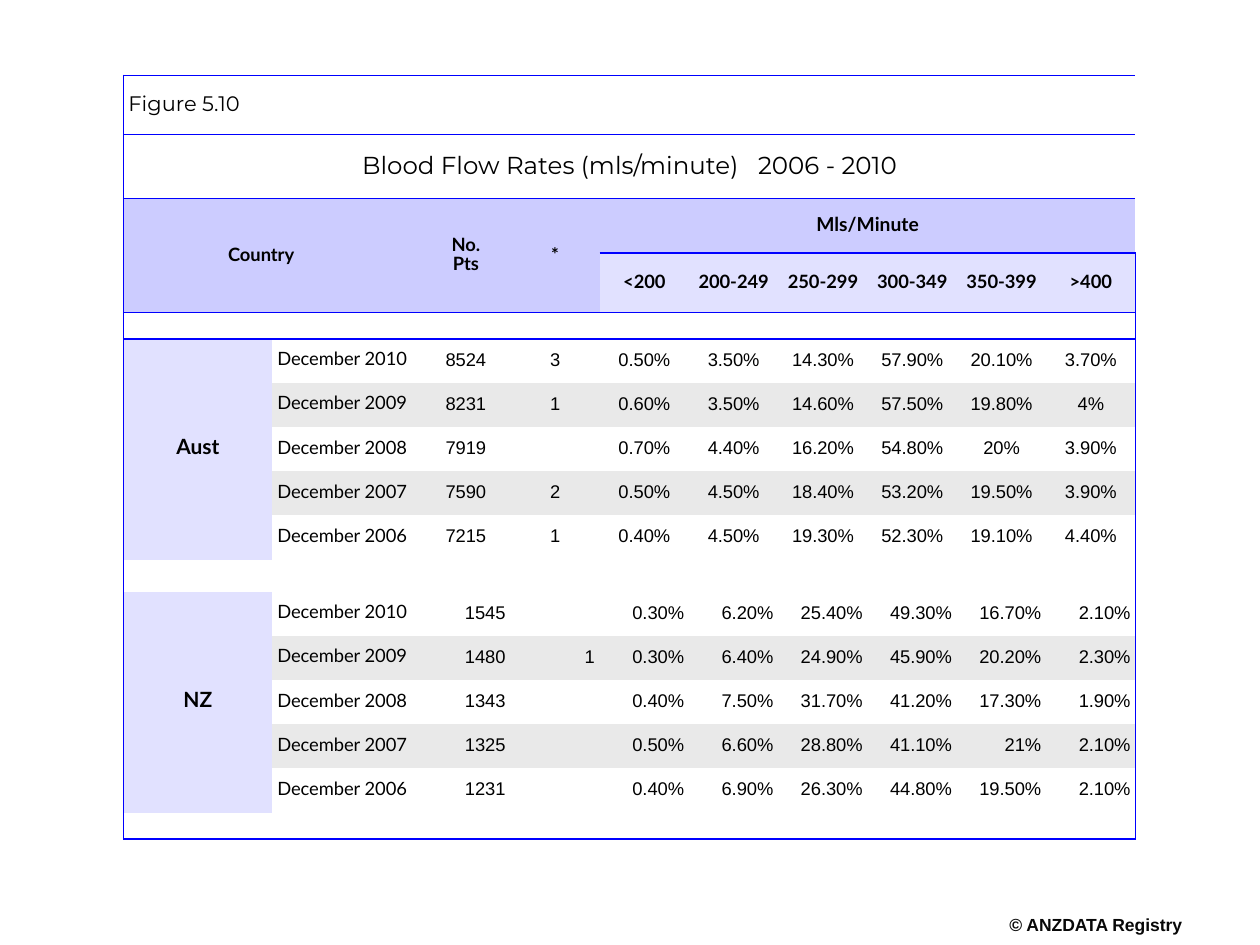
from dataclasses import dataclass

from lxml import etree
from pptx import Presentation
from pptx import util as u
from pptx.dml.color import RGBColor
from pptx.enum import text
from pptx.oxml import ns

BLUE, LAVENDER, PALE, GREY, BLACK = "0000FF", "CCCCFF", "E1E1FF", "E9E9E9", "000000"
LEFT, CENTER, RIGHT = text.PP_ALIGN.LEFT, text.PP_ALIGN.CENTER, text.PP_ALIGN.RIGHT
NO_GRID_STYLE = "{2D5ABB26-0587-4C30-8999-92F81FD0307C}"

COLUMN_WIDTHS = [3.0] * 2 + [1.8] * 8
ROW_HEIGHTS = [1.19, 1.29, 1.1, 1.2, 0.53] + [0.89] * 5 + [0.65] + [0.89] * 5 + [0.53]
LAST_ROW, LAST_COLUMN = len(ROW_HEIGHTS) - 1, len(COLUMN_WIDTHS) - 1
RATE_COLUMN = 4
RATE_BANDS = ["<200", "200-249", "250-299", "300-349", "350-399", ">400"]


@dataclass
class Style:
    font: str
    size: float
    bold: bool = False
    align: text.PP_ALIGN = CENTER
    spacing: float = 0.85
    after: float = 0
    color: str = BLACK


@dataclass
class Country:
    name: str
    first_row: int
    align: text.PP_ALIGN
    years: list[list[str]]  # patients, *, then one rate per band


FIGURE = Style("Montserrat", 12, align=LEFT)
TITLE = Style("Montserrat", 14)
HEADER = Style("Lato", 10.5, bold=True)
GROUP_HEADER = Style("Lato", 11, bold=True)
COUNTRY = Style("Lato", 12, bold=True, spacing=0.75)
MONTH = Style("Lato", 10.5, align=LEFT, spacing=0.75)
COPYRIGHT = Style("Arial", 10, bold=True, color="080808")

COUNTRIES = [
    Country("Aust", 5, CENTER, [
        ["8524", "3", "0.50%", "3.50%", "14.30%", "57.90%", "20.10%", "3.70%"],
        ["8231", "1", "0.60%", "3.50%", "14.60%", "57.50%", "19.80%", "4%"],
        ["7919", "", "0.70%", "4.40%", "16.20%", "54.80%", "20%", "3.90%"],
        ["7590", "2", "0.50%", "4.50%", "18.40%", "53.20%", "19.50%", "3.90%"],
        ["7215", "1", "0.40%", "4.50%", "19.30%", "52.30%", "19.10%", "4.40%"],
    ]),
    Country("NZ", 11, RIGHT, [
        ["1545", "", "0.30%", "6.20%", "25.40%", "49.30%", "16.70%", "2.10%"],
        ["1480", "1", "0.30%", "6.40%", "24.90%", "45.90%", "20.20%", "2.30%"],
        ["1343", "", "0.40%", "7.50%", "31.70%", "41.20%", "17.30%", "1.90%"],
        ["1325", "", "0.50%", "6.60%", "28.80%", "41.10%", "21%", "2.10%"],
        ["1231", "", "0.40%", "6.90%", "26.30%", "44.80%", "19.50%", "2.10%"],
    ]),
]


def rgb(value: str) -> RGBColor:
    return RGBColor.from_string(value)


def format_paragraph(paragraph, style: Style) -> None:
    paragraph.alignment = style.align
    paragraph.line_spacing = style.spacing
    if style.after:
        paragraph.space_after = u.Pt(style.after)
    for run in paragraph.runs:
        run.font.name = style.font
        run.font.size = u.Pt(style.size)
        run.font.bold = style.bold
        run.font.color.rgb = rgb(style.color)


def write(cell, content: str, style: Style) -> None:
    if content:
        cell.text_frame.text = content
        for paragraph in cell.text_frame.paragraphs:
            format_paragraph(paragraph, style)


def fill(cell, color: str) -> None:
    cell.fill.solid()
    cell.fill.fore_color.rgb = rgb(color)


def border_sides(row: int, column: int) -> list[str]:
    in_rates = column >= RATE_COLUMN
    sides = {
        "L": column == 0,
        "R": column == LAST_COLUMN,
        "T": row in (0, 1, 2, 4) or (row == 3 and in_rates),
        "B": row in (0, 1, 3, LAST_ROW) or (row == 2 and in_rates),
    }
    return [side for side, drawn in sides.items() if drawn]


def add_border(cell, side: str) -> None:
    properties = cell._tc.get_or_add_tcPr()
    line = etree.SubElement(properties, ns.qn(f"a:ln{side}"), w=str(u.Pt(1)))
    solid = etree.SubElement(line, ns.qn("a:solidFill"))
    etree.SubElement(solid, ns.qn("a:srgbClr"), val=BLUE)


def prepare_cell(cell, row: int, column: int) -> None:
    cell.vertical_anchor = text.MSO_ANCHOR.MIDDLE
    cell.margin_left = cell.margin_right = u.Cm(0.1)
    cell.margin_top = cell.margin_bottom = u.Cm(0.05)
    for side in border_sides(row, column):
        add_border(cell, side)
    # A small end mark keeps empty rows at their set height
    etree.SubElement(cell.text_frame.paragraphs[0]._p, ns.qn("a:endParaRPr"), sz="800")


def add_grid(slide):
    frame = slide.shapes.add_table(
        len(ROW_HEIGHTS), len(COLUMN_WIDTHS), u.Cm(2.49), u.Cm(1.52),
        u.Cm(sum(COLUMN_WIDTHS)), u.Cm(sum(ROW_HEIGHTS)))
    table = frame.table
    table.first_row = table.horz_banding = False
    table._tbl.tblPr.find(ns.qn("a:tableStyleId")).text = NO_GRID_STYLE
    for column, width in zip(table.columns, COLUMN_WIDTHS):
        column.width = u.Cm(width)
    for row, height in zip(table.rows, ROW_HEIGHTS):
        row.height = u.Cm(height)
    for row in range(LAST_ROW + 1):
        for column in range(LAST_COLUMN + 1):
            prepare_cell(table.cell(row, column), row, column)
    return table


def merge(table, top: int, left: int, bottom: int, right: int):
    cell = table.cell(top, left)
    cell.merge(table.cell(bottom, right))
    return cell


def add_headings(table) -> None:
    write(merge(table, 0, 0, 0, LAST_COLUMN), "Figure 5.10", FIGURE)

    # Title, with a widened space before the years
    title = merge(table, 1, 0, 1, LAST_COLUMN).text_frame.paragraphs[0]
    for part in ("Blood Flow Rates (mls/minute)", " ", "2006 - 2010"):
        title.add_run().text = part
    format_paragraph(title, TITLE)
    title.runs[1].font._element.set("spc", "730")

    # Column headers
    country = merge(table, 2, 0, 3, 1)
    country.margin_right = u.Cm(0.55)
    patients, star = merge(table, 2, 2, 3, 2), merge(table, 2, 3, 3, 3)
    rates = merge(table, 2, RATE_COLUMN, 2, LAST_COLUMN)
    for cell, label, style in ((country, "Country", HEADER), (patients, "No.\nPts", HEADER),
                               (star, "*", HEADER), (rates, "Mls/Minute", GROUP_HEADER)):
        write(cell, label, style)
        fill(cell, LAVENDER)
    for column, band in enumerate(RATE_BANDS, RATE_COLUMN):
        write(table.cell(3, column), band, HEADER)
        fill(table.cell(3, column), PALE)


def add_country(table, country: Country) -> None:
    last_row = country.first_row + len(country.years) - 1
    name = merge(table, country.first_row, 0, last_row, 0)
    write(name, country.name, COUNTRY)
    fill(name, PALE)
    value_style = Style("Arial", 10.5, align=country.align, after=14)
    for index, values in enumerate(country.years):
        row = country.first_row + index
        write(table.cell(row, 1), f"December {2010 - index}", MONTH)
        for column, value in enumerate(values, 2):
            write(table.cell(row, column), value, value_style)
        if index % 2:
            for column in range(1, LAST_COLUMN + 1):
                fill(table.cell(row, column), GREY)


def add_copyright(slide) -> None:
    box = slide.shapes.add_textbox(u.Cm(20.3), u.Cm(18.49), u.Cm(3.58), u.Cm(0.43))
    frame = box.text_frame
    frame.margin_left = frame.margin_right = frame.margin_top = frame.margin_bottom = 0
    frame.word_wrap = False
    frame.text = "© ANZDATA Registry"
    format_paragraph(frame.paragraphs[0], COPYRIGHT)


def main() -> None:
    presentation = Presentation()
    presentation.slide_width, presentation.slide_height = u.Cm(25.4), u.Cm(19.05)
    slide = presentation.slides.add_slide(presentation.slide_layouts[6])
    add_copyright(slide)
    table = add_grid(slide)
    add_headings(table)
    for country in COUNTRIES:
        add_country(table, country)
    presentation.save("out.pptx")


if __name__ == "__main__":
    main()
